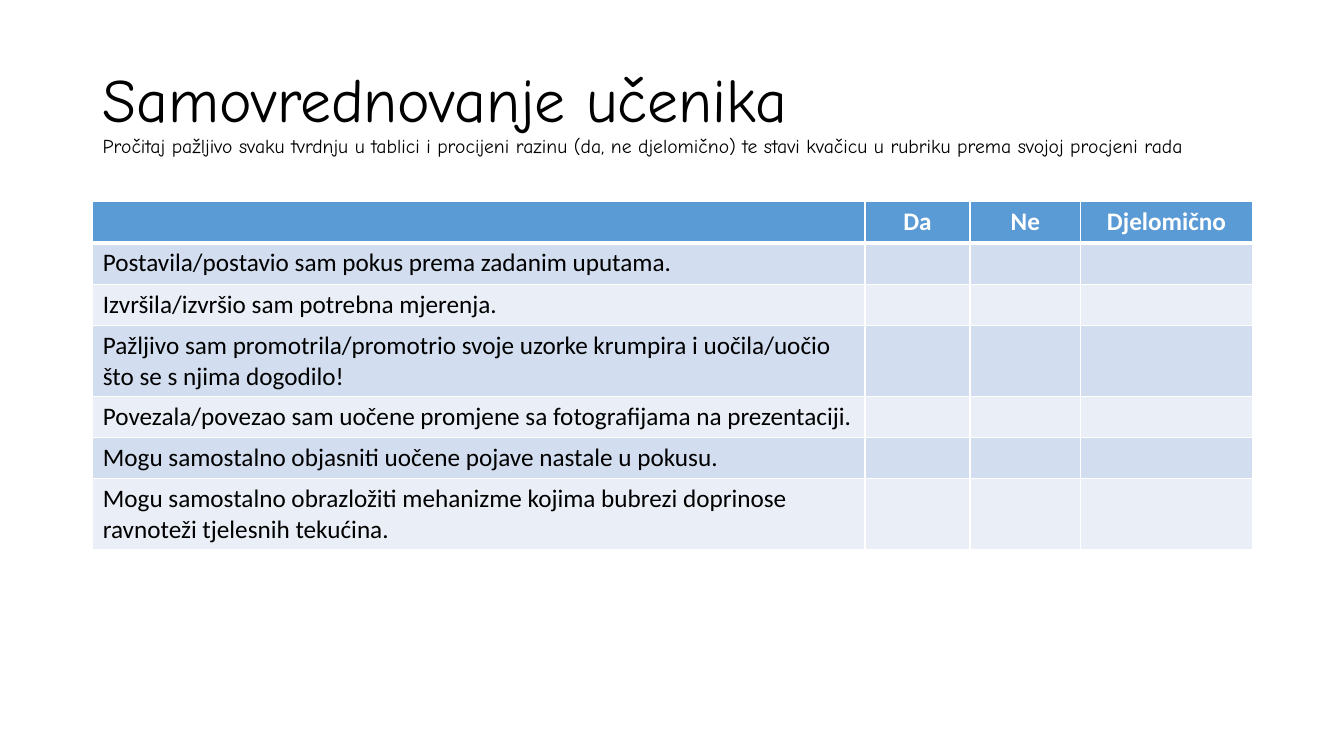
from pptx import Presentation
from pptx.dml.color import RGBColor
from pptx.enum.text import MSO_ANCHOR, PP_ALIGN
from pptx.oxml.ns import qn
from pptx.util import Inches, Pt
from lxml.etree import SubElement

BLACK = RGBColor(0x00, 0x00, 0x00)
WHITE = RGBColor(0xFF, 0xFF, 0xFF)
HEADER_BLUE = RGBColor(0x5B, 0x9B, 0xD5)
BAND_DARK = RGBColor(0xD2, 0xDE, 0xEF)
BAND_LIGHT = RGBColor(0xEA, 0xEF, 0xF7)

TITLE = "Samovrednovanje učenika"
INSTRUCTION = ("Pročitaj pažljivo svaku tvrdnju u tablici i procijeni razinu "
               "(da, ne djelomično) te stavi kvačicu u rubriku prema svojoj procjeni rada")
HEADERS = ["", "Da", "Ne", "Djelomično"]
STATEMENTS = [
    "Postavila/postavio sam pokus prema zadanim uputama.",
    "Izvršila/izvršio sam potrebna mjerenja.",
    "Pažljivo sam promotrila/promotrio svoje uzorke krumpira i uočila/uočio "
    "što se s njima dogodilo!",
    "Povezala/povezao sam uočene promjene sa fotografijama na prezentaciji.",
    "Mogu samostalno objasniti uočene pojave nastale u pokusu.",
    "Mogu samostalno obrazložiti mehanizme kojima bubrezi doprinose "
    "ravnoteži tjelesnih tekućina.",
]
COLUMN_WIDTHS = [7.66, 1.04, 1.1, 1.7]
ROW_HEIGHT = 0.41


def add_run(p, text, size, font, color, bold=False):
    r = p.add_run()
    r.text = text
    r.font.size = Pt(size)
    r.font.name = font
    r.font.color.rgb = color
    r.font.bold = bold


def add_title(s):
    tf = s.shapes.add_textbox(Inches(0.92), Inches(0.4), Inches(11.5), Inches(1.45)).text_frame
    tf.word_wrap = True
    tf.vertical_anchor = MSO_ANCHOR.MIDDLE
    p = tf.paragraphs[0]
    p.line_spacing = 0.9
    add_run(p, TITLE, 44, "Comic Neue", BLACK)
    p.add_line_break()
    add_run(p, INSTRUCTION, 14, "Comic Neue", BLACK)


def set_borders(cell, top, bottom):
    tcPr = cell._tc.get_or_add_tcPr()
    for side, width in (("L", 1), ("R", 1), ("T", top), ("B", bottom)):
        ln = SubElement(tcPr, qn(f"a:ln{side}"), w=str(Pt(width)))
        fill = SubElement(ln, qn("a:solidFill"))
        SubElement(fill, qn("a:srgbClr"), val=str(WHITE))


def fill_cell(cell, row, text):
    is_header = row == 0
    # Borders precede the fill; a thicker rule separates the header
    set_borders(cell, 3 if row == 1 else 1, 3 if is_header else 1)
    cell.fill.solid()
    if is_header:
        cell.fill.fore_color.rgb = HEADER_BLUE
    else:
        cell.fill.fore_color.rgb = BAND_DARK if row % 2 else BAND_LIGHT
    p = cell.text_frame.paragraphs[0]
    p.font.size = Pt(18)
    if is_header:
        p.alignment = PP_ALIGN.CENTER
    if text:
        add_run(p, text, 18, "Calibri", WHITE if is_header else BLACK, is_header)


def add_checklist(s):
    rows = [HEADERS] + [[text, "", "", ""] for text in STATEMENTS]
    table = s.shapes.add_table(len(rows), len(HEADERS), Inches(0.92), Inches(2),
                               Inches(sum(COLUMN_WIDTHS)),
                               Inches(ROW_HEIGHT * len(rows))).table
    for column, width in zip(table.columns, COLUMN_WIDTHS):
        column.width = Inches(width)
    for i, texts in enumerate(rows):
        table.rows[i].height = Inches(ROW_HEIGHT)
        for j, text in enumerate(texts):
            fill_cell(table.cell(i, j), i, text)


def main():
    prs = Presentation()
    prs.slide_width = Inches(13.33)
    prs.slide_height = Inches(7.5)
    s = prs.slides.add_slide(prs.slide_layouts[6])
    # Heading with instruction
    add_title(s)
    # Self-assessment table
    add_checklist(s)
    prs.save("out.pptx")


if __name__ == "__main__":
    main()
